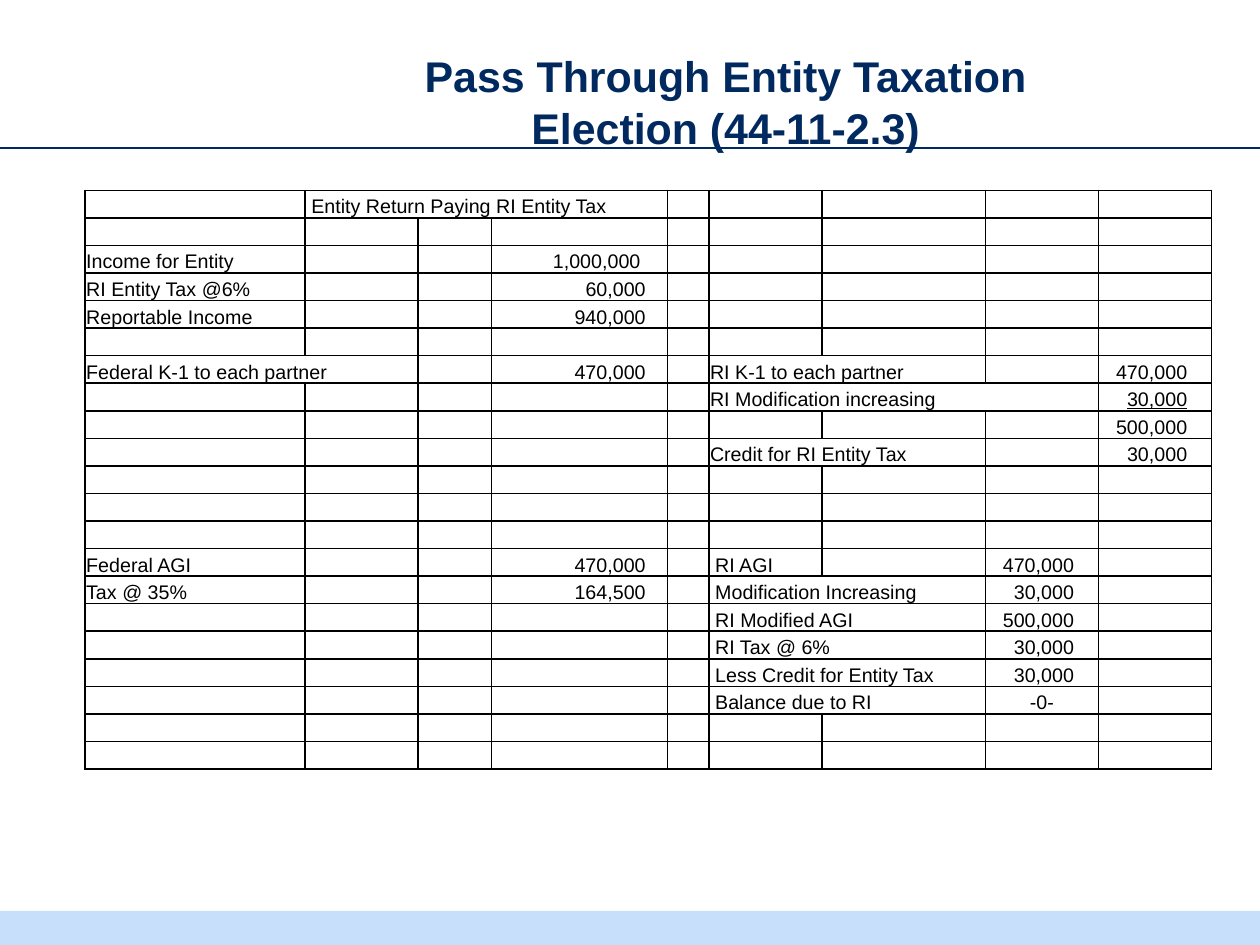
from dataclasses import dataclass
from math import ceil

from lxml.etree import SubElement
from pptx import Presentation
from pptx.dml.color import RGBColor
from pptx.enum.shapes import MSO_CONNECTOR as Connector, MSO_SHAPE as Shape
from pptx.enum.text import MSO_ANCHOR as Anchor, PP_ALIGN as Align
from pptx.oxml import parse_xml
from pptx.oxml.ns import nsdecls, qn
from pptx.util import Emu, Inches, Pt


@dataclass(frozen=True)
class Theme:
    navy: RGBColor = RGBColor.from_string("002960")
    pale: RGBColor = RGBColor.from_string("C7DFFB")
    black: RGBColor = RGBColor.from_string("000000")
    font: str = "Arial"
    title_size: int = 24
    cell_size: int = 11


THEME = Theme()
# The slide is measured in eighths of a point.
EIGHTH = Pt(1) / 8
WIDTH, HEIGHT = Emu(ceil(5641 * EIGHTH)), Emu(ceil(4231 * EIGHTH))
TITLE = "Pass Through Entity Taxation Election (44-11-2.3)"

TABLE_LEFT, TABLE_TOP, TABLE_HEIGHT = 0.66, 1.48, 4.5
COLUMNS = [1.71, 0.88, 0.57, 1.37, 0.32, 0.88, 1.27, 0.88, 0.88]
ROW_COUNT = 21
ITEM, ENTITY_VALUE, STATE_ITEM, RETURN_VALUE, K1_VALUE = 0, 3, 5, 7, 8
EDGE, INDENT = 0.01, 0.05
VALUE_INSETS = {ENTITY_VALUE: 0.17, RETURN_VALUE: 0.19, K1_VALUE: 0.19}

# (row, column, columns spanned, left inset, text)
LABELS = [
    (0, 1, 3, INDENT, "Entity Return Paying RI Entity Tax"),
    (2, ITEM, 1, EDGE, "Income for Entity"),
    (3, ITEM, 1, EDGE, "RI Entity Tax @6%"),
    (4, ITEM, 1, EDGE, "Reportable Income"),
    (6, ITEM, 2, EDGE, "Federal K-1 to each partner"),
    (6, STATE_ITEM, 2, EDGE, "RI K-1 to each partner"),
    (7, STATE_ITEM, 3, EDGE, "RI Modification increasing"),
    (9, STATE_ITEM, 2, EDGE, "Credit for RI Entity Tax"),
    (13, ITEM, 1, EDGE, "Federal AGI"),
    (13, STATE_ITEM, 1, INDENT, "RI AGI"),
    (14, ITEM, 1, EDGE, "Tax @ 35%"),
    (14, STATE_ITEM, 2, INDENT, "Modification Increasing"),
    (15, STATE_ITEM, 2, INDENT, "RI Modified AGI"),
    (16, STATE_ITEM, 2, INDENT, "RI Tax @ 6%"),
    (17, STATE_ITEM, 2, INDENT, "Less Credit for Entity Tax"),
    (18, STATE_ITEM, 2, INDENT, "Balance due to RI"),
]
# column: {row: amount}
AMOUNTS = {
    ENTITY_VALUE: {2: "1,000,000", 3: "60,000", 4: "940,000", 6: "470,000",
                   13: "470,000", 14: "164,500"},
    RETURN_VALUE: {13: "470,000", 14: "30,000", 15: "500,000", 16: "30,000",
                   17: "30,000", 18: "-0-"},
    K1_VALUE: {6: "470,000", 7: "30,000", 8: "500,000", 9: "30,000"},
}
UNDERLINED = (7, K1_VALUE)


def add_span(para, text, size, color, bold=False, underline=False):
    span = para.add_run()
    span.text = text
    font = span.font
    font.name, font.size, font.bold = THEME.font, Pt(size), bold
    font.color.rgb = color
    font.underline = underline


def add_frame(page):
    band_top = Inches(7.08)
    band = page.shapes.add_shape(
        Shape.RECTANGLE, 0, band_top, WIDTH, HEIGHT - band_top)
    band.shadow.inherit = False
    band.fill.solid()
    band.fill.fore_color.rgb = THEME.pale
    band.line.fill.background()

    rule = page.shapes.add_connector(
        Connector.STRAIGHT, 0, Inches(1.15), WIDTH, Inches(1.15))
    rule.line.color.rgb = THEME.navy
    rule.line.width = Pt(1.5)
    SubElement(rule.element.spPr, qn("a:effectLst"))


def add_title(page):
    box = page.shapes.add_textbox(Inches(2.97), Inches(0.34), Inches(5.34), Inches(0.91))
    frame = box.text_frame
    frame.word_wrap = True
    frame.margin_left = frame.margin_right = Inches(0.05)
    frame.margin_top = frame.margin_bottom = Inches(0.05)
    para = frame.paragraphs[0]
    para.alignment = Align.CENTER
    add_span(para, TITLE, THEME.title_size, THEME.navy, bold=True)


def style_cell(cell):
    """Clear the fill, draw four borders and keep empty text as small as the rest."""
    cell.vertical_anchor = Anchor.BOTTOM
    cell.margin_left = cell.margin_right = cell.margin_top = Inches(EDGE)
    cell.margin_bottom = 0
    cell.fill.background()
    properties = cell._tc.get_or_add_tcPr()
    for position, side in enumerate(("lnL", "lnR", "lnT", "lnB")):
        properties.insert(position, parse_xml(
            f'<a:{side} {nsdecls("a")} w="{Pt(1)}"><a:solidFill>'
            f'<a:srgbClr val="{THEME.black}"/></a:solidFill></a:{side}>'))
    para = cell.text_frame.paragraphs[0]
    SubElement(para._p, qn("a:endParaRPr"), sz=str(THEME.cell_size * 100))


def add_tax_table(page):
    table = page.shapes.add_table(
        ROW_COUNT, len(COLUMNS), Inches(TABLE_LEFT), Inches(TABLE_TOP),
        Inches(sum(COLUMNS)), Inches(TABLE_HEIGHT)).table
    table.first_row = table.horz_banding = False
    for column, width in zip(table.columns, COLUMNS):
        column.width = Inches(width)
    for row in table.rows:
        row.height = Inches(TABLE_HEIGHT / ROW_COUNT)
    for cell in table.iter_cells():
        style_cell(cell)

    for row, column, spanned, inset, text in LABELS:
        cell = table.cell(row, column)
        if spanned > 1:
            cell.merge(table.cell(row, column + spanned - 1))
        cell.margin_left = Inches(inset)
        add_span(cell.text_frame.paragraphs[0], text, THEME.cell_size, THEME.black)

    for column, amounts in AMOUNTS.items():
        for row, text in amounts.items():
            cell = table.cell(row, column)
            para = cell.text_frame.paragraphs[0]
            if text == "-0-":
                para.alignment = Align.CENTER
            else:
                para.alignment = Align.RIGHT
                cell.margin_right = Inches(VALUE_INSETS[column])
            add_span(para, text, THEME.cell_size, THEME.black,
                     underline=(row, column) == UNDERLINED)
    table.cell(2, ENTITY_VALUE).margin_right = Inches(0.21)


def main():
    deck = Presentation()
    deck.slide_width, deck.slide_height = WIDTH, HEIGHT
    page = deck.slides.add_slide(deck.slide_layouts[6])
    add_frame(page)
    add_title(page)
    add_tax_table(page)
    deck.save("out.pptx")


if __name__ == "__main__":
    main()
